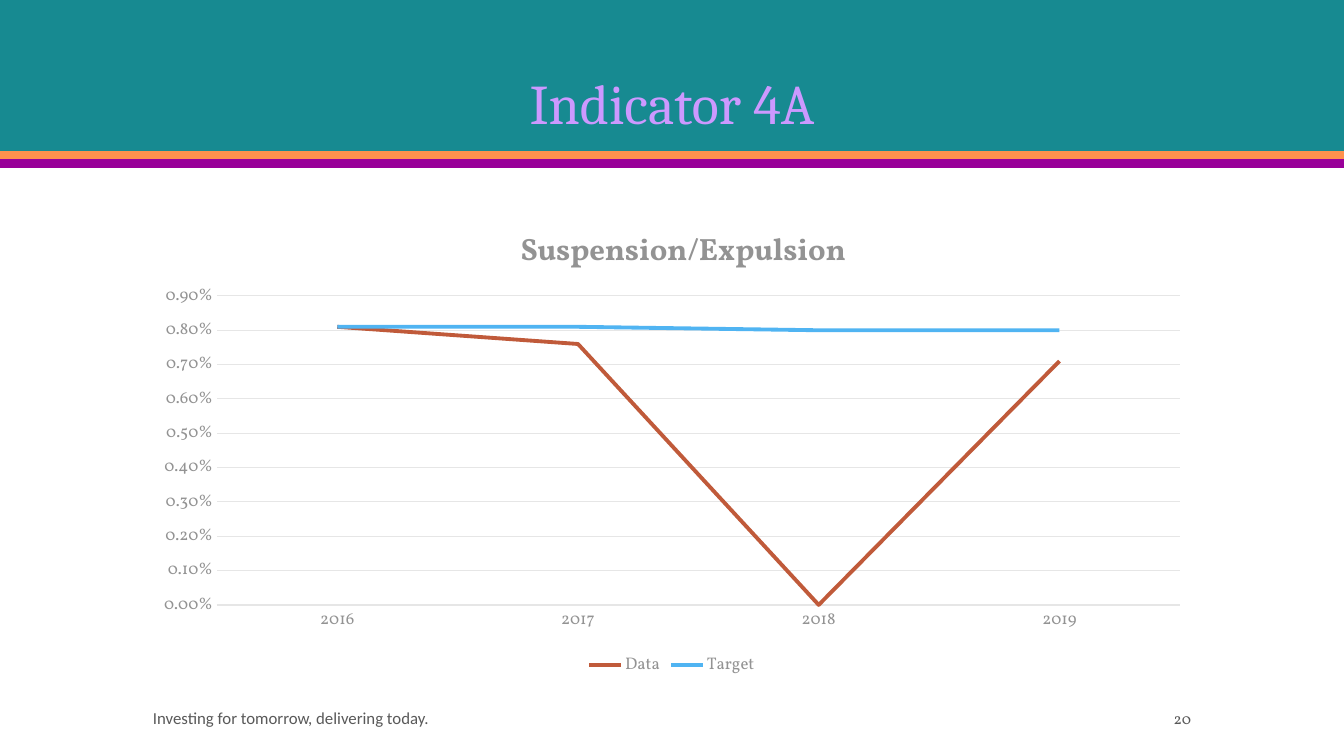
from pptx import Presentation
from pptx.chart.data import CategoryChartData
from pptx.dml.color import RGBColor
from pptx.enum.chart import XL_CHART_TYPE, XL_LEGEND_POSITION, XL_MARKER_STYLE, XL_TICK_MARK
from pptx.enum.shapes import MSO_SHAPE
from pptx.enum.text import MSO_ANCHOR, PP_ALIGN
from pptx.oxml import parse_xml
from pptx.oxml.ns import nsdecls, qn
from pptx.util import Emu, Pt

PX = 914400 / 100.8
SLIDE_WIDTH, SLIDE_HEIGHT = 1344, 756
LEFT, CONTENT_WIDTH = 143, 1058
CHART_TOP, CHART_HEIGHT = 202, 479
BODY_FONT = "Vollkorn"
GRAY, DARK_GRAY, GRID_GRAY = "939393", "595959", "E6E6E6"

BANDS = [("178A91", 0, 151), ("FF914D", 151, 9), ("990099", 159, 9)]
YEARS = ["2016", "2017", "2018", "2019"]
SERIES = [
    ("Data", [0.0081, 0.0076, 0, 0.0071], "C05A3A"),
    ("Target", [0.0081, 0.0081, 0.008, 0.008], "50B4F2"),
]


def px(*lengths):
    return [Emu(round(length * PX)) for length in lengths]


def color(value):
    return RGBColor.from_string(value)


def set_font(font, size, fill, name=BODY_FONT, bold=False):
    font.size, font.name, font.bold = Pt(size), name, bold
    font.color.rgb = color(fill)


def set_line(line, fill, width):
    line.color.rgb = color(fill)
    line.width = Pt(width)


def write_text(text_frame, text, size, fill, name=BODY_FONT, align=PP_ALIGN.LEFT,
               anchor=MSO_ANCHOR.MIDDLE, spacing=1.0):
    text_frame.word_wrap = True
    text_frame.vertical_anchor = anchor
    paragraph = text_frame.paragraphs[0]
    paragraph.alignment, paragraph.line_spacing = align, spacing
    run = paragraph.add_run()
    run.text = text
    set_font(run.font, size, fill, name)


def add_band(slide, fill, top, height):
    band = slide.shapes.add_shape(MSO_SHAPE.RECTANGLE, *px(0, top, SLIDE_WIDTH, height))
    band.shadow.inherit = False
    band.fill.solid()
    band.fill.fore_color.rgb = color(fill)
    band.line.fill.background()


def place_title(slide, text):
    title = slide.shapes.title
    title.left, title.top, title.width, title.height = px(LEFT, 28, CONTENT_WIDTH, 114)
    write_text(title.text_frame, text, 40, "CC99FF", name="Cambria",
               align=PP_ALIGN.CENTER, anchor=MSO_ANCHOR.BOTTOM, spacing=0.9)
    # Bring the title in front of the bands
    title.element.getparent().append(title.element)


def add_text(slide, text, left, width, **text_format):
    box = slide.shapes.add_textbox(*px(left, 703, width, 30))
    write_text(box.text_frame, text, **text_format)


def set_layout(element, index, left, top, width=None, height=None):
    """Place a chart part by its slide position in px."""
    parts = [("x", (left - LEFT) / CONTENT_WIDTH), ("y", (top - CHART_TOP) / CHART_HEIGHT)]
    target = ""
    if width:
        parts += [("w", width / CONTENT_WIDTH), ("h", height / CHART_HEIGHT)]
        target = '<c:layoutTarget val="inner"/>'
    modes = "".join(f'<c:{key}Mode val="edge"/>' for key in "xy")
    values = "".join(f'<c:{key} val="{value:.4f}"/>' for key, value in parts)
    for previous in element.findall(qn("c:layout")):
        element.remove(previous)
    element.insert(index, parse_xml(
        f'<c:layout {nsdecls("c")}><c:manualLayout>{target}{modes}{values}'
        '</c:manualLayout></c:layout>'))


def add_line_chart(slide, title):
    data = CategoryChartData(number_format="0.00%")
    data.categories = YEARS
    for name, values, _ in SERIES:
        data.add_series(name, values)
    chart = slide.shapes.add_chart(
        XL_CHART_TYPE.LINE, *px(LEFT, CHART_TOP, CONTENT_WIDTH, CHART_HEIGHT), data).chart
    set_font(chart.font, 10, DARK_GRAY)

    # Title
    chart.has_title = True
    run = chart.chart_title.text_frame.paragraphs[0].add_run()
    run.text = title
    set_font(run.font, 22, GRAY, bold=True)
    set_layout(chart.chart_title.element, 1, 515, 222)

    # Legend
    chart.has_legend = True
    chart.legend.position = XL_LEGEND_POSITION.BOTTOM
    chart.legend.include_in_layout = False
    set_font(chart.legend.font, 12, GRAY)

    # Axes
    for axis in (chart.category_axis, chart.value_axis):
        axis.major_tick_mark = axis.minor_tick_mark = XL_TICK_MARK.NONE
        set_font(axis.tick_labels.font, 12, GRAY)
    set_line(chart.category_axis.format.line, GRID_GRAY, 1)
    values = chart.value_axis
    values.minimum_scale, values.maximum_scale, values.major_unit = 0, 0.009, 0.001
    values.tick_labels.number_format = "0.00%"
    values.tick_labels.number_format_is_linked = False
    values.format.line.fill.background()
    set_line(values.major_gridlines.format.line, GRID_GRAY, 0.75)

    # Series
    plot = chart.plots[0]
    plot.vary_by_categories = False
    for series, (_, _, fill) in zip(plot.series, SERIES):
        series.smooth = False
        series.marker.style = XL_MARKER_STYLE.NONE
        set_line(series.format.line, fill, 2.75)
    set_layout(chart.element.find(".//" + qn("c:plotArea")), 0, 217, 296, 963, 309)


def main():
    presentation = Presentation()
    presentation.slide_width, presentation.slide_height = px(SLIDE_WIDTH, SLIDE_HEIGHT)
    slide = presentation.slides.add_slide(presentation.slide_layouts[5])

    # Header
    for band in BANDS:
        add_band(slide, *band)
    place_title(slide, "Indicator 4A")

    # Chart
    add_line_chart(slide, "Suspension/Expulsion")

    # Footer
    add_text(slide, "Investing for tomorrow, delivering today.", LEFT, 688,
             size=12, fill=DARK_GRAY, name="Calibri")
    add_text(slide, "20", 1050, 151, size=11, fill=DARK_GRAY, align=PP_ALIGN.RIGHT)

    presentation.save("out.pptx")


if __name__ == "__main__":
    main()
